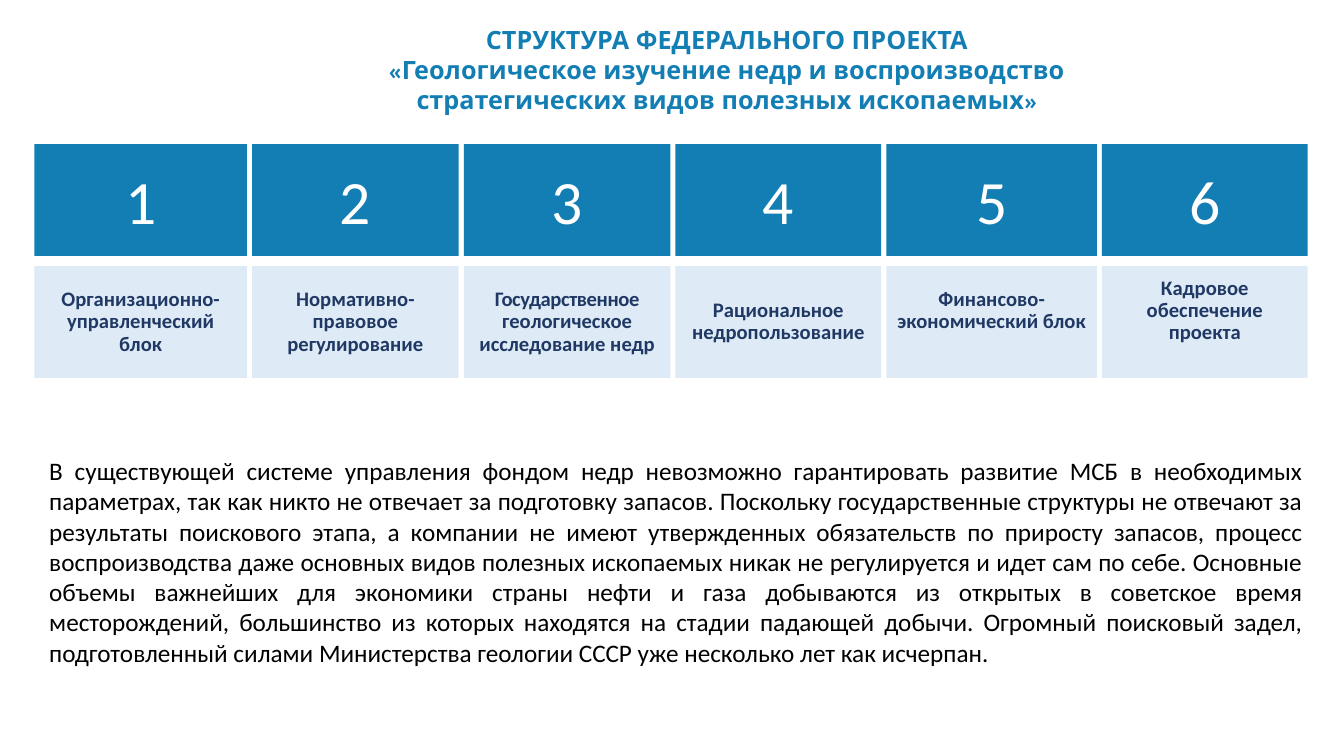
from dataclasses import dataclass
from itertools import accumulate

from pptx import Presentation
from pptx.dml.color import RGBColor
from pptx.enum.shapes import MSO_SHAPE as Shape
from pptx.enum.text import MSO_ANCHOR as Anchor, PP_ALIGN as Align
from pptx.util import Emu, Pt

EMU_PER_PX = 9144  # 100 px to the inch


@dataclass(frozen=True)
class Theme:
    blue: str = "137EB4"
    pale: str = "DEEBF7"
    navy: str = "203864"
    white: str = "FFFFFF"
    black: str = "000000"
    heading_font: str = "League Spartan"
    body_font: str = "Calibri"
    number_size: float = 44
    label_size: float = 14.7
    text_size: float = 18


THEME = Theme()

# Column layout
LEFT, GAP, HEIGHT = 34, 5, 111
NUMBER_TOP, LABEL_TOP = 143, 264
SIDE_INSET, EDGE_INSET, RAISED_INSET = 10, 5, 27

# Width, label runs as (text, letter spacing), side inset, bottom inset
BLOCKS = [
    (211, [("Организационно-управленческий блок", 0)], SIDE_INSET, EDGE_INSET),
    (205, [("Нормативно-правовое регулирование", 0)], SIDE_INSET, EDGE_INSET),
    (205, [("Государственное", -0.3), (" геологическое исследование недр", 0)],
     SIDE_INSET, EDGE_INSET),
    (204, [("Рациональное недропользование", 0)], EDGE_INSET, EDGE_INSET),
    (209, [("Финансово-экономический блок", 0)], SIDE_INSET, RAISED_INSET),
    (204, [("Кадровое обеспечение проекта", 0)], SIDE_INSET, RAISED_INSET),
]

TITLE = [
    "СТРУКТУРА ФЕДЕРАЛЬНОГО ПРОЕКТА",
    "«Геологическое изучение недр и воспроизводство стратегических видов "
    "полезных ископаемых»",
]
BODY = [
    "В существующей системе управления фондом недр невозможно гарантировать "
    "развитие МСБ в необходимых параметрах, так как никто не отвечает за "
    "подготовку запасов. Поскольку государственные структуры не отвечают за "
    "результаты поискового этапа, а компании не имеют утвержденных обязательств "
    "по приросту запасов, процесс воспроизводства даже основных видов полезных "
    "ископаемых никак не регулируется и идет сам по себе. Основные объемы "
    "важнейших для экономики страны нефти и газа добываются из открытых в "
    "советское время месторождений, большинство из которых находятся на стадии "
    "падающей добычи. Огромный поисковый задел, подготовленный силами "
    "Министерства геологии СССР уже несколько лет как исчерпан.",
]


def px(length):
    return Emu(length * EMU_PER_PX)


def add_span(para, text, font, size, color, bold=False, spacing=0):
    span = para.add_run()
    span.text = text
    span.font.name = font
    span.font.size = Pt(size)
    span.font.bold = bold
    span.font.color.rgb = RGBColor.from_string(color)
    if spacing:
        span._r.get_or_add_rPr().set("spc", str(round(spacing * 100)))


def set_insets(frame, side=SIDE_INSET, bottom=EDGE_INSET):
    frame.word_wrap = True
    frame.margin_left = frame.margin_right = px(side)
    frame.margin_top = px(EDGE_INSET)
    frame.margin_bottom = px(bottom)


def add_tile(page, left, top, width, fill, side=SIDE_INSET, bottom=EDGE_INSET):
    """Add a filled rectangle and return its centred paragraph."""
    tile = page.shapes.add_shape(Shape.RECTANGLE, px(left), px(top), px(width), px(HEIGHT))
    tile.shadow.inherit = False
    tile.fill.solid()
    tile.fill.fore_color.rgb = RGBColor.from_string(fill)
    tile.line.fill.background()
    frame = tile.text_frame
    set_insets(frame, side, bottom)
    frame.vertical_anchor = Anchor.MIDDLE
    para = frame.paragraphs[0]
    para.alignment = Align.CENTER
    return para


def add_text(page, left, top, width, height, lines, align, font, color, bold=False):
    box = page.shapes.add_textbox(px(left), px(top), px(width), px(height))
    frame = box.text_frame
    set_insets(frame)
    for index, line in enumerate(lines):
        para = frame.add_paragraph() if index else frame.paragraphs[0]
        para.alignment = align
        add_span(para, line, font, THEME.text_size, color, bold)


def add_block(page, number, left, width, label, side, bottom):
    """Add one column: the number above, its label below."""
    para = add_tile(page, left, NUMBER_TOP, width, THEME.blue)
    add_span(para, str(number), THEME.body_font, THEME.number_size, THEME.white)
    para = add_tile(page, left, LABEL_TOP, width, THEME.pale, side, bottom)
    para.line_spacing = 0.9
    for text, spacing in label:
        add_span(para, text, THEME.body_font, THEME.label_size, THEME.navy, True, spacing)


def main():
    deck = Presentation()
    deck.slide_width, deck.slide_height = px(1333), px(750)
    page = deck.slides.add_slide(deck.slide_layouts[6])

    # Title
    add_text(page, 271, 19, 900, 101, TITLE, Align.CENTER,
             THEME.heading_font, THEME.blue, bold=True)

    # Six project blocks
    lefts = accumulate((block[0] + GAP for block in BLOCKS), initial=LEFT)
    for number, (left, block) in enumerate(zip(lefts, BLOCKS), start=1):
        add_block(page, number, left, *block)

    # Explanation
    add_text(page, 39, 447, 1263, 222, BODY, Align.JUSTIFY,
             THEME.body_font, THEME.black)

    deck.save("out.pptx")


if __name__ == "__main__":
    main()
